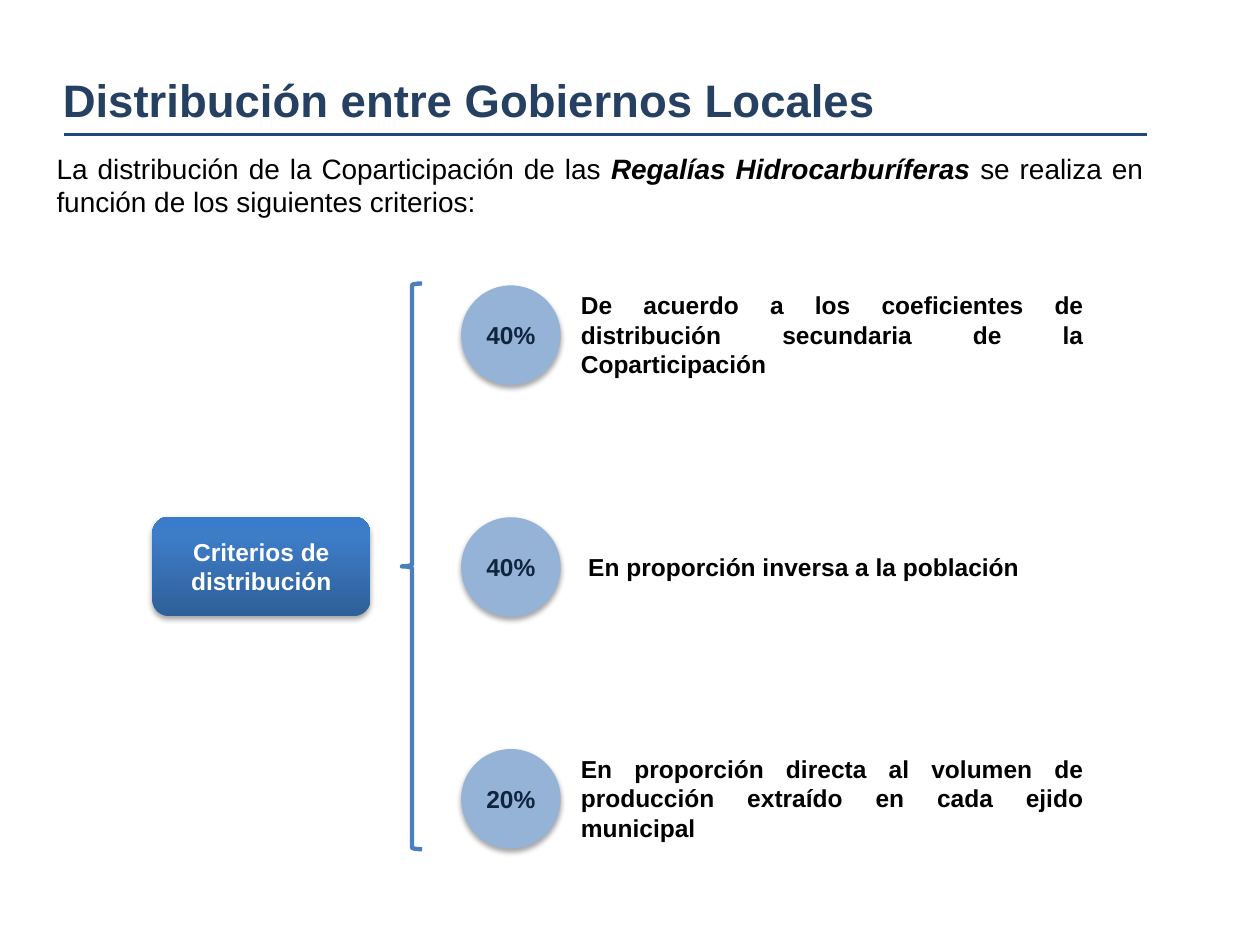
from copy import deepcopy
from typing import NamedTuple

from lxml import etree
from pptx import Presentation
from pptx.dml import color
from pptx.enum import shapes, text
from pptx.oxml import ns
from pptx.util import Inches, Pt

NAVY, BLUE, BRACE = "254061", "1F497D", "4B7EBC"
CIRCLE, CIRCLE_TEXT = "95B3D7", "0F243E"
BLACK, WHITE = "000000", "FFFFFF"
JUSTIFY, CENTER = text.PP_ALIGN.JUSTIFY, text.PP_ALIGN.CENTER
DEFAULT_INSETS = (0.1, 0.05, 0.1, 0.05)


class Criterion(NamedTuple):
    share: str
    label: str
    text_height: float
    insets: tuple = (0.04, 0.05, 0.1, 0.05)


CRITERIA = [
    Criterion("40%", "De acuerdo a los coeficientes de distribución secundaria "
              "de la Coparticipación", 0.81),
    Criterion("40%", "En proporción inversa a la población", 0.34, DEFAULT_INSETS),
    Criterion("20%", "En proporción directa al volumen de producción extraído "
              "en cada ejido municipal", 0.81),
]


def rgb(hex_code: str) -> color.RGBColor:
    return color.RGBColor.from_string(hex_code)


def box(left: float, top: float, width: float, height: float) -> list:
    return [Inches(value) for value in (left, top, width, height)]


def write(shape, *runs, size=14, hue=BLACK, bold=True, align=None,
          anchor=text.MSO_ANCHOR.TOP, insets=DEFAULT_INSETS) -> None:
    """Each run is a string, or a (string, emphasised) pair."""
    frame = shape.text_frame
    frame.word_wrap = True
    frame.vertical_anchor = anchor
    (frame.margin_left, frame.margin_top,
     frame.margin_right, frame.margin_bottom) = map(Inches, insets)
    paragraph = frame.paragraphs[0]
    paragraph.alignment = align
    for item in runs:
        words, emphasis = (item, False) if isinstance(item, str) else item
        run = paragraph.add_run()
        run.text = words
        font = run.font
        font.name, font.size = "Arial", Pt(size)
        font.bold, font.italic = bold or emphasis, emphasis
        font.color.rgb = rgb(hue)


def add_effects(shape, shadowed: bool) -> None:
    """Give the shape a soft drop shadow, or an empty effect list."""
    effects = etree.SubElement(shape._element.spPr, ns.qn("a:effectLst"))
    if shadowed:
        shadow = etree.SubElement(
            effects, ns.qn("a:outerShdw"), blurRad=str(Pt(3.1)),
            dist=str(Pt(1.8)), dir="5400000", rotWithShape="0")
        tint = etree.SubElement(shadow, ns.qn("a:srgbClr"), val=BLACK)
        etree.SubElement(tint, ns.qn("a:alpha"), val="35000")


def fill_gradient(shape, stops: list, angle: float) -> None:
    shape.fill.gradient()
    shape.fill.gradient_angle = angle
    stop_list = shape._element.spPr.find(".//" + ns.qn("a:gsLst"))
    while len(stop_list) < len(stops):
        stop_list.append(deepcopy(stop_list[0]))
    for stop, (position, hue) in zip(shape.fill.gradient_stops, stops):
        stop.position = position
        stop.color.rgb = rgb(hue)


def add_criterion(slide, criterion: Criterion, center: float) -> None:
    diameter = 0.79
    group = slide.shapes.add_group_shape().shapes
    label = group.add_textbox(*box(
        4.57, center - criterion.text_height / 2, 4.13, criterion.text_height))
    write(label, criterion.label, align=JUSTIFY, insets=criterion.insets)
    circle = group.add_shape(shapes.MSO_SHAPE.OVAL, *box(
        3.66, center - diameter / 2, diameter, diameter))
    circle.fill.solid()
    circle.fill.fore_color.rgb = rgb(CIRCLE)
    circle.line.fill.background()
    add_effects(circle, shadowed=True)
    write(circle, criterion.share, hue=CIRCLE_TEXT, align=CENTER,
          anchor=text.MSO_ANCHOR.MIDDLE, insets=(0.04, 0.05, 0.04, 0.05))


def main() -> None:
    prs = Presentation()
    prs.slide_width, prs.slide_height = Inches(10), Inches(7.5)
    slide = prs.slides.add_slide(prs.slide_layouts[6])

    # Heading and its rule
    rule = slide.shapes.add_connector(
        shapes.MSO_CONNECTOR.STRAIGHT, *box(0.51, 1.07, 9.1, 1.07))
    rule.line.color.rgb = rgb(BLUE)
    rule.line.width = Pt(1.5)
    add_effects(rule, shadowed=False)
    title = slide.shapes.add_textbox(*box(0.4, 0.52, 8.82, 0.54))
    write(title, "Distribución entre Gobiernos Locales", size=26, hue=NAVY)

    # Introduction
    intro = slide.shapes.add_textbox(*box(0.35, 1.15, 8.82, 0.64))
    write(intro, "La distribución de la Coparticipación de las ",
          ("Regalías Hidrocarburíferas ", True),
          "se realiza en función de los siguientes criterios:",
          size=16, bold=False, align=JUSTIFY)

    # Root of the diagram
    root = slide.shapes.add_shape(
        shapes.MSO_SHAPE.ROUNDED_RECTANGLE, *box(1.21, 4.1, 1.73, 0.79))
    fill_gradient(root, [(0, "2F5F99"), (0.8, "3D7CC7"), (1, "3A7CCB")], 90)
    root.line.fill.background()
    add_effects(root, shadowed=True)
    write(root, "Criterios de distribución", hue=WHITE, align=CENTER,
          anchor=text.MSO_ANCHOR.MIDDLE)

    # Brace
    brace = slide.shapes.add_shape(
        shapes.MSO_SHAPE.LEFT_BRACE, *box(3.19, 2.25, 0.16, 4.49))
    brace.fill.background()
    brace.line.color.rgb = rgb(BRACE)
    brace.line.width = Pt(2.5)
    brace.shadow.inherit = False

    # Criteria, evenly spaced
    first_center, pitch = 2.66, 1.84
    for row, criterion in enumerate(CRITERIA):
        add_criterion(slide, criterion, first_center + row * pitch)

    prs.save("out.pptx")


if __name__ == "__main__":
    main()
